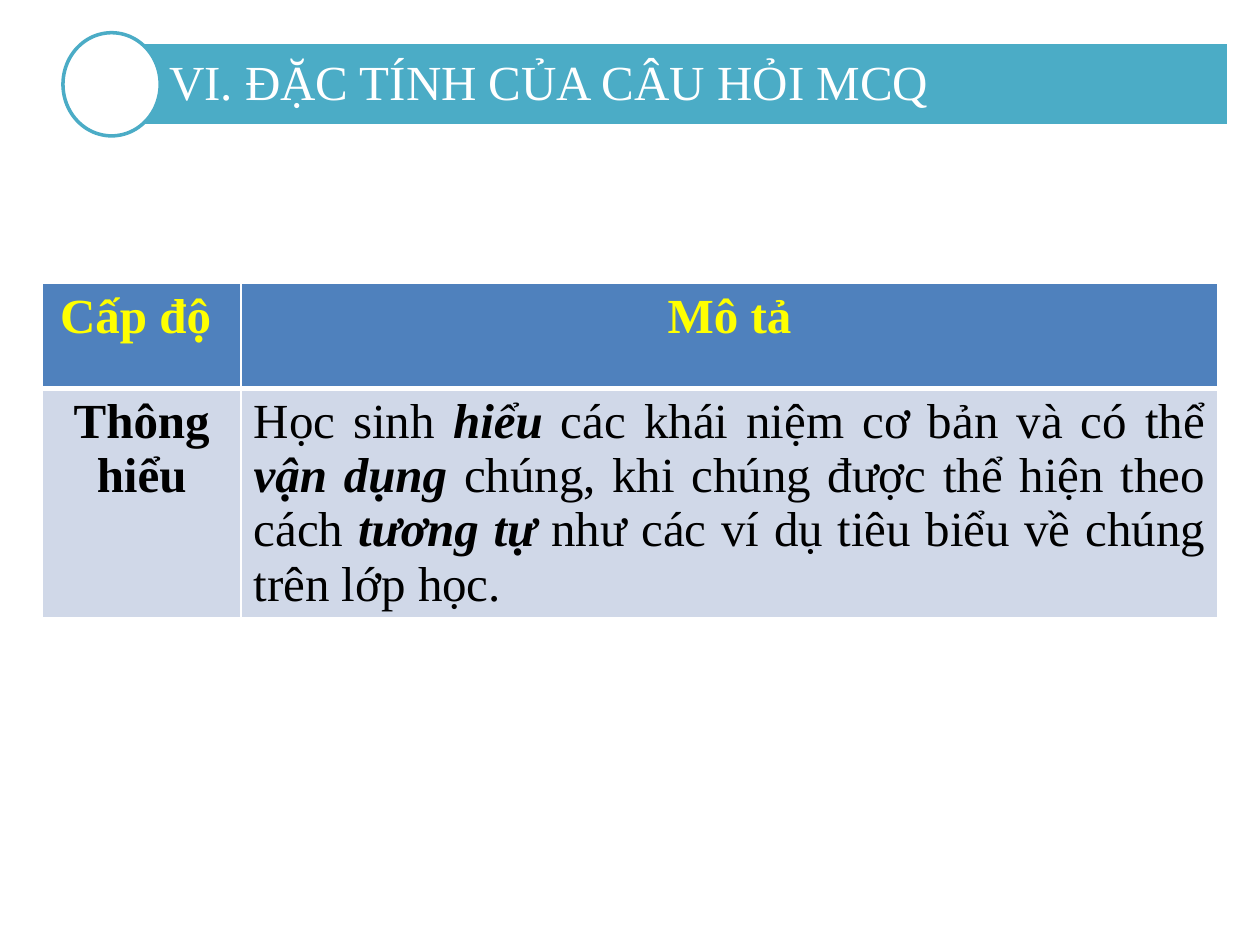
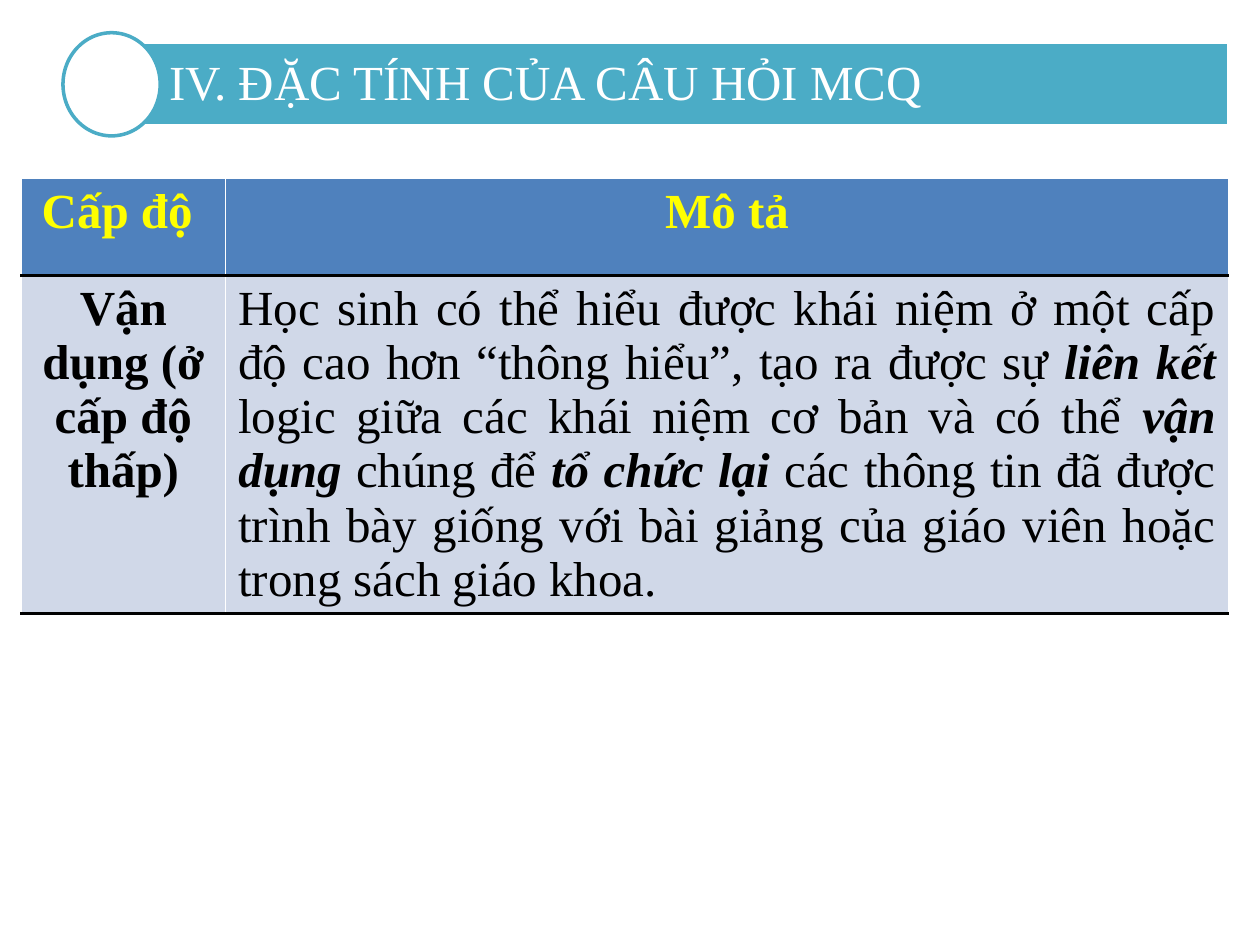
import pptx
import pptx.dml.color
import pptx.enum.shapes
import pptx.enum.text
import pptx.oxml
import pptx.oxml.ns
import pptx.util

Cm = pptx.util.Cm
Pt = pptx.util.Pt
RGBColor = pptx.dml.color.RGBColor
MSO_SHAPE = pptx.enum.shapes.MSO_SHAPE
PP_ALIGN = pptx.enum.text.PP_ALIGN

WHITE = RGBColor(0xFF, 0xFF, 0xFF)
BLACK = RGBColor(0x00, 0x00, 0x00)
YELLOW = RGBColor(0xFF, 0xFF, 0x00)
TEAL = RGBColor(0x4B, 0xAC, 0xC6)
HEADER_BLUE = RGBColor(0x4F, 0x81, 0xBD)
BODY_BLUE = RGBColor(0xD0, 0xD8, 0xE8)

THIN_WHITE = (WHITE, 1)


def write(tf, text, color=BLACK, size=28, font="Times New Roman", bold=False,
          align=PP_ALIGN.LEFT, line_spacing=None):
    """Fill a text frame; words between asterisks become bold italic."""
    p = tf.paragraphs[0]
    p.alignment = align
    p.line_spacing = line_spacing
    for i, part in enumerate(text.split("*")):
        emphasis = i % 2 == 1
        r = p.add_run()
        r.text = part
        r.font.name = font
        r.font.size = Pt(size)
        r.font.color.rgb = color
        r.font.bold = bold or emphasis
        r.font.italic = emphasis


def set_border(cell, side, color, width):
    """Draw one cell border; side is L, R, T or B, in that order per cell."""
    cell._tc.get_or_add_tcPr().append(pptx.oxml.parse_xml(
        f'<a:ln{side} {pptx.oxml.ns.nsdecls("a")} w="{Pt(width)}">'
        f'<a:solidFill><a:srgbClr val="{color}"/></a:solidFill></a:ln{side}>'))


class Deck:
    def __init__(self):
        self.prs = pptx.Presentation()
        self.prs.slide_width = Cm(25.4)
        self.prs.slide_height = Cm(19.05)
        self.s = None

    def add_slide(self, title):
        self.s = self.prs.slides.add_slide(self.prs.slide_layouts[6])
        self.title_band(title)

    def shape(self, kind, left, top, width, height, fill, line):
        sp = self.s.shapes.add_shape(kind, Cm(left), Cm(top), Cm(width), Cm(height))
        sp.shadow.inherit = False
        sp.fill.solid()
        sp.fill.fore_color.rgb = fill
        sp.line.color.rgb = line
        sp.line.width = Pt(2)
        return sp

    def title_band(self, title):
        band = self.shape(MSO_SHAPE.RECTANGLE, 2.24, 0.86, 22.53, 1.68, TEAL, WHITE)
        tf = band.text_frame
        tf.word_wrap = True
        tf.vertical_anchor = pptx.enum.text.MSO_ANCHOR.MIDDLE
        tf.margin_left = Cm(1.17)
        tf.margin_top = tf.margin_right = tf.margin_bottom = Cm(0.15)
        write(tf, title, color=WHITE, line_spacing=0.9)
        self.shape(MSO_SHAPE.OVAL, 1.27, 0.66, 1.96, 2.08, WHITE, TEAL)

    def level_table(self, left, top, widths, heights, level, description,
                    divider, bottom):
        """Add a header row and one level row; divider and bottom are (colour, points)."""
        table = self.s.shapes.add_table(
            2, 2, Cm(left), Cm(top), Cm(sum(widths)), Cm(sum(heights))).table
        table.horz_banding = False
        for column, width in zip(table.columns, widths):
            column.width = Cm(width)
        for row, height in zip(table.rows, heights):
            row.height = Cm(height)
        texts = [("Cấp độ ", "Mô tả"), (level, description)]
        edges = [THIN_WHITE, divider, bottom]
        for i, row in enumerate(texts):
            for j, text in enumerate(row):
                cell = table.cell(i, j)
                borders = zip("LRTB", (THIN_WHITE, THIN_WHITE, edges[i], edges[i + 1]))
                for side, (color, width) in borders:
                    set_border(cell, side, color, width)
                cell.fill.solid()
                cell.fill.fore_color.rgb = BODY_BLUE if i else HEADER_BLUE
                is_description = i == 1 and j == 1
                write(cell.text_frame, text,
                      color=BLACK if i else YELLOW,
                      bold=not is_description,
                      align=PP_ALIGN.JUSTIFY if is_description else PP_ALIGN.CENTER)


def main():
    deck = Deck()

    deck.add_slide("VI. ĐẶC TÍNH CỦA CÂU HỎI MCQ")
    deck.level_table(
        0.85, 5.72, (4.01, 19.69), (2.11, 3.71), "Thông hiểu",
        "Học sinh *hiểu* các khái niệm cơ bản và có thể *vận dụng *chúng, khi "
        "chúng được thể hiện theo cách *tương tự *như các ví dụ tiêu biểu về "
        "chúng trên lớp học.",
        divider=(WHITE, 3), bottom=THIN_WHITE)

    deck.add_slide("IV. ĐẶC TÍNH CỦA CÂU HỎI MCQ")
    rule = (BLACK, 2.25)
    deck.level_table(
        0.42, 3.6, (4.13, 20.21), (1.95, 5.28), "Vận dụng (ở cấp độ thấp)",
        "Học sinh có thể hiểu được khái niệm ở một cấp độ cao hơn “thông hiểu”, "
        "tạo ra được sự *liên kết *logic giữa các khái niệm cơ bản và có thể "
        "*vận dụng *chúng để *tổ chức lại *các thông tin đã được trình bày giống "
        "với bài giảng của giáo viên hoặc trong sách giáo khoa.",
        divider=rule, bottom=rule)

    deck.prs.save("out.pptx")


if __name__ == "__main__":
    main()
